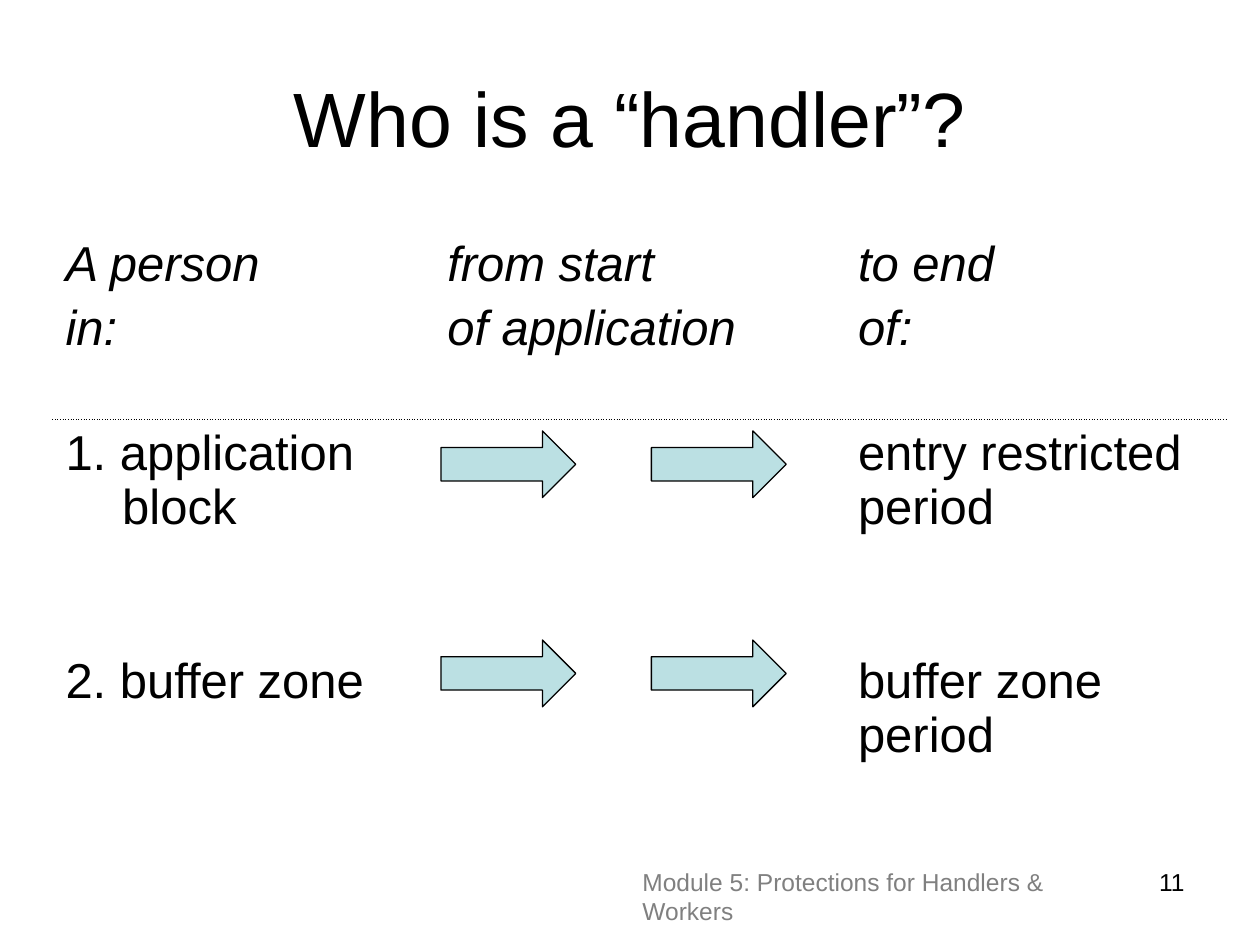
from lxml.etree import SubElement
from pptx import Presentation
from pptx.dml.color import RGBColor
from pptx.enum.shapes import MSO_SHAPE
from pptx.enum.text import MSO_ANCHOR, PP_ALIGN
from pptx.oxml.ns import qn
from pptx.util import Inches, Pt

COLORS = {"ink": "000000", "gray": "808080", "arrow": "BBE0E3"}
FONT = "Arial"
COLS = (3.03, 3.26, 3.03)
ROWS = (1.5, 1.81, 1.71)
CELLS = (
    ("A person\nin:", "from start\nof application", "to end\nof:"),
    ("1. application block", "", "entry restricted period"),
    ("2. buffer zone", "", "buffer zone period"),
)


def paint(name):
    return RGBColor.from_string(COLORS[name])


def style(frame, size, color="ink", italic=False, align=PP_ALIGN.LEFT):
    for para in frame.paragraphs:
        para.alignment = align
        for run in para.runs:
            font = run.font
            font.name, font.size, font.italic = FONT, Pt(size), italic
            font.color.rgb = paint(color)


def place(shape, box):
    shape.left, shape.top, shape.width, shape.height = map(Inches, box)


def add_title(slide, box):
    title = slide.shapes.title
    place(title, box)
    frame = title.text_frame
    frame.text = "Who is a “handler”?"
    frame.vertical_anchor = MSO_ANCHOR.MIDDLE
    style(frame, 44, align=PP_ALIGN.CENTER)


def add_rule(cell, side):
    """Dotted border; it must come before the cell's fill."""
    props = cell._tc.get_or_add_tcPr()
    line = SubElement(props, qn(f"a:{side}"), w=str(Pt(1)))
    fill = SubElement(line, qn("a:solidFill"))
    SubElement(fill, qn("a:srgbClr"), val=COLORS["ink"])
    SubElement(line, qn("a:prstDash"), val="sysDot")


def add_grid(slide, box):
    table = slide.shapes.add_table(len(ROWS), len(COLS), *map(Inches, box)).table
    table.first_row = table.horz_banding = False
    for col, width in zip(table.columns, COLS):
        col.width = Inches(width)
    for row, height in zip(table.rows, ROWS):
        row.height = Inches(height)

    for r, texts in enumerate(CELLS):
        for c, text in enumerate(texts):
            cell = table.cell(r, c)
            if r < 2:
                add_rule(cell, ("lnB", "lnT")[r])
            cell.fill.background()
            frame = cell.text_frame
            frame.text = text
            style(frame, 28, italic=r == 0)
            for para in frame.paragraphs[1:]:
                para.space_before = Pt(5.6)

    # Hanging indent for the numbered item that wraps
    indent = table.cell(1, 0).text_frame.paragraphs[0]._p.get_or_add_pPr()
    indent.set("marL", str(Inches(0.45)))
    indent.set("indent", str(Inches(-0.45)))


def add_arrows(slide, box):
    """Two by two arrows, one in each corner of the box."""
    left, top, width, height = box
    wide, high = 1.07, 0.53
    for y in (top, top + height - high):
        for x in (left, left + width - wide):
            arrow = slide.shapes.add_shape(
                MSO_SHAPE.RIGHT_ARROW, *map(Inches, (x, y, wide, high)))
            arrow.shadow.inherit = False
            arrow.fill.solid()
            arrow.fill.fore_color.rgb = paint("arrow")
            arrow.line.color.rgb = paint("ink")
            arrow.line.width = Pt(0.75)


def add_note(slide, box, text, color, align):
    frame = slide.shapes.add_textbox(*map(Inches, box)).text_frame
    frame.word_wrap = True
    frame.text = text
    style(frame, 14, color, align=align)


def main():
    deck = Presentation()
    deck.slide_width, deck.slide_height = Inches(10), Inches(7.5)
    slide = deck.slides.add_slide(deck.slide_layouts[5])

    add_title(slide, (0.5, 0.3, 9, 1.25))
    add_grid(slide, (0.42, 1.83, sum(COLS), sum(ROWS)))
    add_arrows(slide, (3.5, 3.42, 2.74, 2.19))

    # Footer and slide number
    add_note(slide, (5, 6.83, 4.15, 0.33),
             "Module 5: Protections for Handlers & Workers", "gray", PP_ALIGN.LEFT)
    add_note(slide, (7.17, 6.83, 2.33, 0.52), "11", "ink", PP_ALIGN.RIGHT)
    deck.save("out.pptx")


if __name__ == "__main__":
    main()
